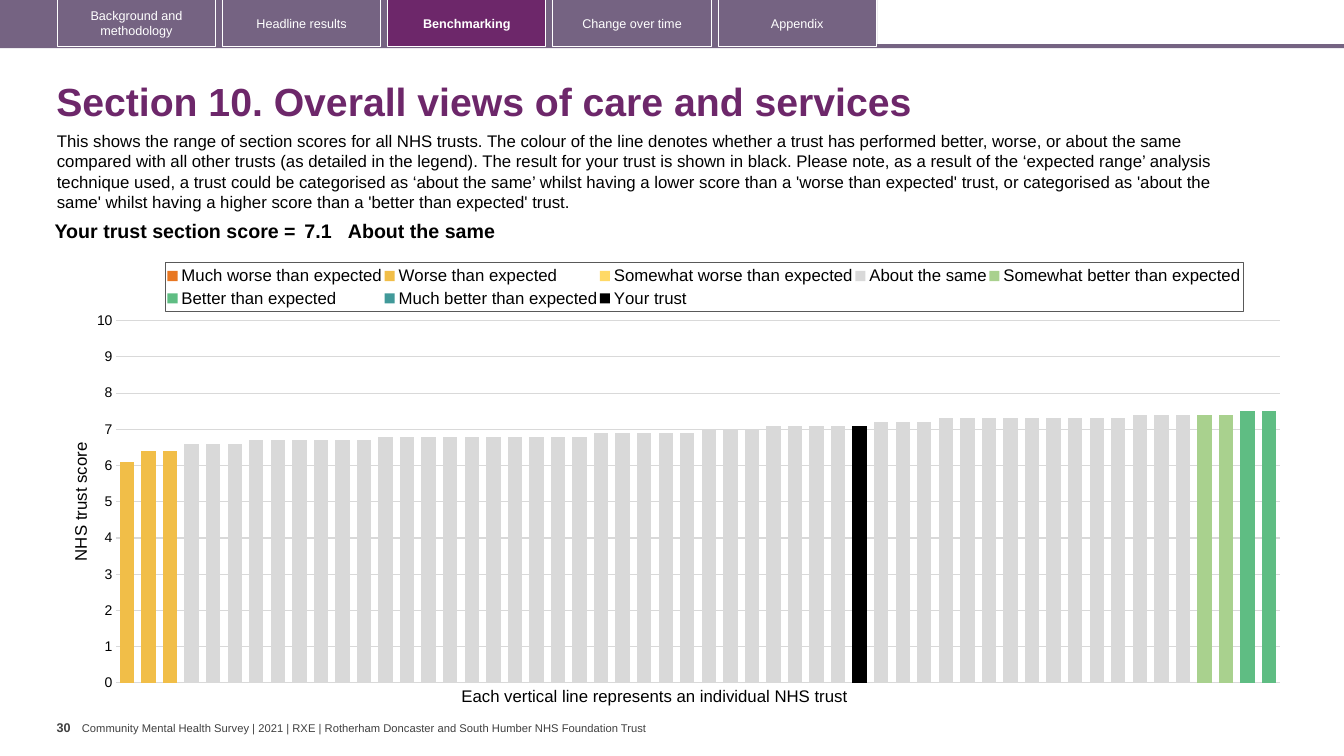
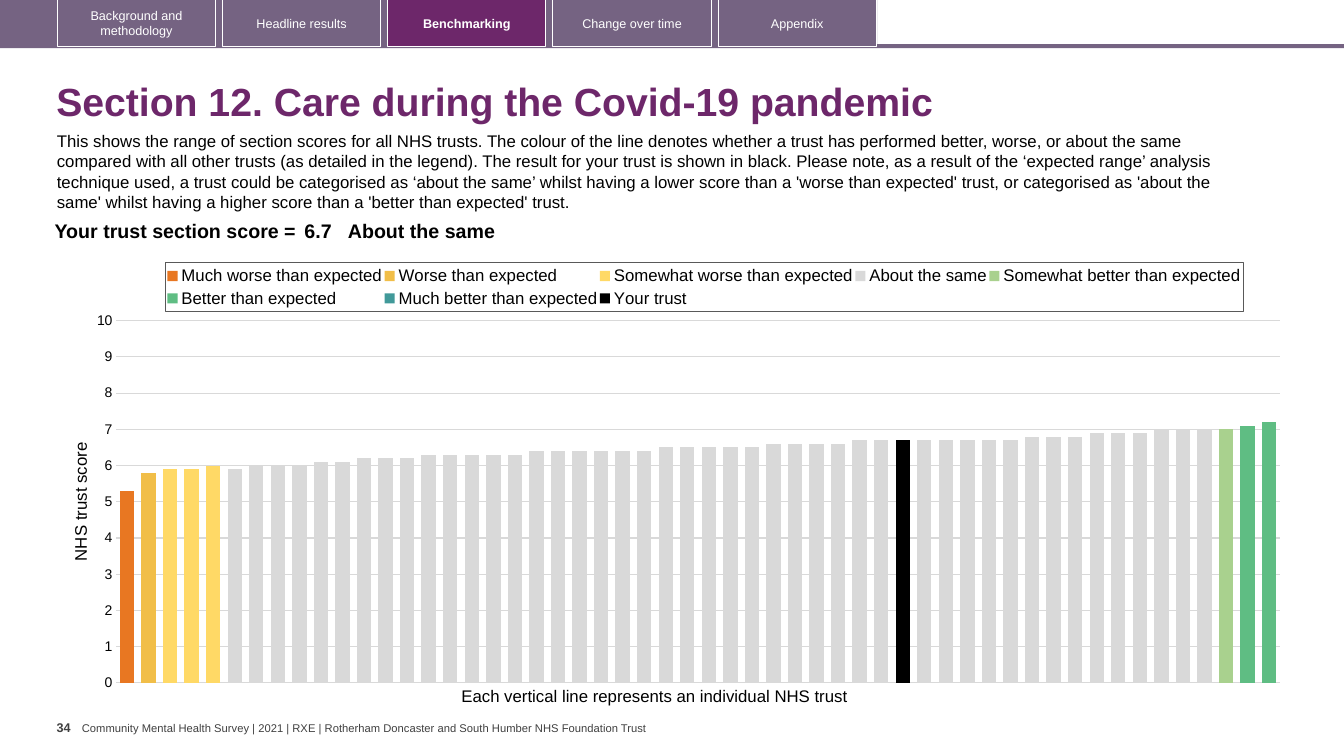
from copy import deepcopy

from lxml import etree
from pptx import Presentation
from pptx import util as u
from pptx.chart import data as chart_data
from pptx.dml import color
from pptx.enum import chart as chart_enum
from pptx.enum import shapes, text
from pptx.oxml import ns

PURPLE, MAUVE, WHITE, BLACK = "6D276A", "756382", "FFFFFF", "000000"
FOOTER_GREY, GRID_GREY, FRAME_GREY = "404040", "D9D9D9", "595959"
SLIDE_WIDTH, SLIDE_HEIGHT = 960, 540

TABS = ["Background and methodology", "Headline results", "Benchmarking",
        "Change over time", "Appendix"]
ACTIVE_TAB = "Benchmarking"
FOOTER = ("Community Mental Health Survey | 2021 | RXE | "
          "Rotherham Doncaster and South Humber NHS Foundation Trust")
INTRODUCTION = (
    "This shows the range of section scores for all NHS trusts. The colour of the line "
    "denotes whether a trust has performed better, worse, or about the same compared with "
    "all other trusts (as detailed in the legend). The result for your trust is shown in "
    "black. Please note, as a result of the ‘expected range’ analysis technique used, a "
    "trust could be categorised as ‘about the same’ whilst having a lower score than a "
    "'worse than expected' trust, or categorised as 'about the same' whilst having a higher "
    "score than a 'better than expected' trust.")
CAPTION = "Each vertical line represents an individual NHS trust"

BAND_COLOURS = {
    "Much worse than expected": "E87722",
    "Worse than expected": "F1BE48",
    "Somewhat worse than expected": "FFD966",
    "About the same": "D9D9D9",
    "Somewhat better than expected": "A9D18E",
    "Better than expected": "5FBD83",
    "Much better than expected": "419999",
}

# Each band lists (score, number of trusts), from the lowest score up.
SECTIONS = [
    {"page": "30", "title": "Section 10. Overall views of care and services",
     "score": 7.1, "position": 34, "verdict": "About the same",
     "bands": {
         "Worse than expected": [(6.1, 1), (6.4, 2)],
         "About the same": [(6.6, 3), (6.7, 6), (6.8, 10), (6.9, 5), (7, 3),
                            (7.1, 5), (7.2, 3), (7.3, 9), (7.4, 3)],
         "Somewhat better than expected": [(7.4, 2)],
         "Better than expected": [(7.5, 2)]}},
    {"page": "34", "title": "Section 12. Care during the Covid-19 pandemic",
     "score": 6.7, "position": 36, "verdict": "About the same",
     "bands": {
         "Much worse than expected": [(5.3, 1)],
         "Worse than expected": [(5.8, 1)],
         "Somewhat worse than expected": [(5.9, 2), (6, 1)],
         "About the same": [(5.9, 1), (6, 3), (6.1, 2), (6.2, 3), (6.3, 5), (6.4, 6),
                            (6.5, 5), (6.6, 4), (6.7, 8), (6.8, 3), (6.9, 3), (7, 3)],
         "Somewhat better than expected": [(7, 1)],
         "Better than expected": [(7.1, 1), (7.2, 1)]}},
]


def rgb(value):
    return color.RGBColor.from_string(value)


def points(box):
    return [u.Pt(length) for length in box]


def apply_format(target, **values):
    for name, value in values.items():
        setattr(target, name, value)


def format_font(font, size, colour=BLACK, bold=False, name="Arial"):
    apply_format(font, size=u.Pt(size), bold=bold, name=name)
    font.color.rgb = rgb(colour)


def write(frame, content, size, colour=BLACK, bold=False, align=text.PP_ALIGN.LEFT):
    frame.text = content
    paragraph = frame.paragraphs[0]
    paragraph.alignment = align
    format_font(paragraph.runs[0].font, size, colour, bold)
    return paragraph


def margins(left, top, right, bottom):
    return {"margin_left": u.Pt(left), "margin_top": u.Pt(top),
            "margin_right": u.Pt(right), "margin_bottom": u.Pt(bottom)}


def add_text(slide, box, content, size, colour=BLACK, bold=False, **frame_format):
    frame = slide.shapes.add_textbox(*points(box)).text_frame
    apply_format(frame, **{"word_wrap": True, **frame_format})
    write(frame, content, size, colour, bold)


def add_rectangle(slide, box, fill=None, line=None):
    shape = slide.shapes.add_shape(shapes.MSO_SHAPE.RECTANGLE, *points(box))
    shape.shadow.inherit = False
    if fill:
        shape.fill.solid()
        shape.fill.fore_color.rgb = rgb(fill)
    else:
        shape.fill.background()
    if line:
        shape.line.color.rgb = rgb(line)
        shape.line.width = u.Pt(0.75)
    else:
        shape.line.fill.background()
    return shape


def add_navigation(slide, box):
    left, top, width, height = box
    tab_left, tab_step, tab_width = 41, 118, 113
    add_rectangle(slide, (left, top + height - 2.5, width, 3), MAUVE)
    add_rectangle(slide, (left, top, 626.5, height), MAUVE)
    for index, label in enumerate(TABS):
        active = label == ACTIVE_TAB
        tab = add_rectangle(
            slide, (left + tab_left + index * tab_step, top - 0.5, tab_width, height),
            PURPLE if active else None, WHITE)
        apply_format(tab.text_frame, word_wrap=True,
                     vertical_anchor=text.MSO_ANCHOR.MIDDLE)
        write(tab.text_frame, label, 9, WHITE, active, text.PP_ALIGN.CENTER)


def add_footer(slide, box, page):
    left, top, width, height = box
    add_text(slide, (left, top, 18, height), page, 9, FOOTER_GREY, True,
             word_wrap=False, **margins(0, 3.6, 0, 3.6))
    add_text(slide, (left + 18, top + 4.5, width - 18, 9.5), FOOTER, 8, FOOTER_GREY,
             word_wrap=False, vertical_anchor=text.MSO_ANCHOR.MIDDLE,
             **margins(0, 0, 0, 0))


def format_title(slide, box, content):
    title = slide.shapes.title
    apply_format(title, **dict(zip(("left", "top", "width", "height"), points(box))))
    apply_format(title.text_frame, word_wrap=True, auto_size=text.MSO_AUTO_SIZE.NONE,
                 vertical_anchor=text.MSO_ANCHOR.MIDDLE)
    write(title.text_frame, content, 28, PURPLE, True).line_spacing = 0.9


def add_score_table(slide, box, score, verdict):
    left, top, width, height = box
    table = slide.shapes.add_table(1, 3, *points(box)).table
    apply_format(table, first_row=False, horz_banding=False)
    columns = [
        ("Your trust section score =", 189.5, 3, text.PP_ALIGN.RIGHT),
        (str(score), 34, 3, text.PP_ALIGN.LEFT),
        (verdict, width - 223.5, 0, text.PP_ALIGN.LEFT),
    ]
    for index, (content, column_width, side, align) in enumerate(columns):
        table.columns[index].width = u.Pt(column_width)
        cell = table.cell(0, index)
        cell.fill.background()
        apply_format(cell, **margins(side, 3, side, 3))
        write(cell.text_frame, content, 14, bold=True, align=align)


def band_values(bands):
    """Place the bands one after another along the shared categories."""
    total = sum(count for runs in bands.values() for _, count in runs)
    result, start = {}, 0
    for name in BAND_COLOURS:
        scores = [score for score, count in bands.get(name, []) for _ in range(count)]
        end = start + len(scores)
        result[name] = [None] * start + scores + [None] * (total - end)
        start = end
    return result, total


def add_element(parent, tag, **attributes):
    return etree.SubElement(parent, ns.qn(tag), attributes)


def set_layout(parent, index, fractions, inner=False):
    for old in parent.findall(ns.qn("c:layout")):
        parent.remove(old)
    layout = etree.Element(ns.qn("c:layout"))
    manual = add_element(layout, "c:manualLayout")
    if inner:
        add_element(manual, "c:layoutTarget", val="inner")
    for name in ("xMode", "yMode"):
        add_element(manual, "c:" + name, val="edge")
    for name, fraction in zip("xywh", fractions):
        add_element(manual, "c:" + name, val=str(fraction))
    parent.insert(index, layout)


def frame_legend(legend):
    properties = etree.Element(ns.qn("c:spPr"))
    line = add_element(properties, "a:ln", w=str(u.Pt(0.75)))
    add_element(add_element(line, "a:solidFill"), "a:srgbClr", val=FRAME_GREY)
    legend.find(ns.qn("c:overlay")).addnext(properties)


def move_last_series_to_second_axis(plot_area):
    bars = plot_area.find(ns.qn("c:barChart"))
    second_bars = deepcopy(bars)
    for series in second_bars.findall(ns.qn("c:ser"))[:-1]:
        second_bars.remove(series)
    bars.remove(bars.findall(ns.qn("c:ser"))[-1])
    category_axis = plot_area.find(ns.qn("c:catAx"))
    value_axis = plot_area.find(ns.qn("c:valAx"))
    second_category, second_value = deepcopy(category_axis), deepcopy(value_axis)
    for tag in ("c:majorGridlines", "c:title"):
        second_value.remove(second_value.find(ns.qn(tag)))
    for tag, value in {"c:axPos": "r", "c:tickLblPos": "none", "c:crosses": "max"}.items():
        second_value.find(ns.qn(tag)).set("val", value)
    for part in (second_bars, second_category, second_value):
        for tag in ("c:axId", "c:crossAx"):
            for reference in part.findall(ns.qn(tag)):
                reference.set("val", str(int(reference.get("val")) + 1))
    bars.addnext(second_bars)
    value_axis.addnext(second_value)
    second_value.addnext(second_category)


def add_score_chart(slide, box, section):
    values, total = band_values(section["bands"])
    values["Your trust"] = [section["score"] if index == section["position"] else None
                            for index in range(total)]
    data = chart_data.CategoryChartData()
    data.categories = [str(number) for number in range(1, total + 1)]
    for name, scores in values.items():
        data.add_series(name, scores)
    chart = slide.shapes.add_chart(chart_enum.XL_CHART_TYPE.COLUMN_CLUSTERED,
                                   *points(box), data).chart
    chart.has_title = False
    format_font(chart.font, 10, name="Calibri")

    plot = chart.plots[0]
    apply_format(plot, gap_width=50, overlap=100, vary_by_categories=False)
    for series, colour in zip(plot.series, [*BAND_COLOURS.values(), BLACK]):
        series.invert_if_negative = False
        series.format.fill.solid()
        series.format.fill.fore_color.rgb = rgb(colour)

    chart.category_axis.visible = False
    axis = chart.value_axis
    no_tick = chart_enum.XL_TICK_MARK.NONE
    apply_format(axis, minimum_scale=0, maximum_scale=10, major_unit=1,
                 major_tick_mark=no_tick, minor_tick_mark=no_tick,
                 tick_label_position=chart_enum.XL_TICK_LABEL_POSITION.NEXT_TO_AXIS,
                 has_major_gridlines=True)
    axis.format.line.fill.background()
    axis.major_gridlines.format.line.color.rgb = rgb(GRID_GREY)
    axis.major_gridlines.format.line.width = u.Pt(0.75)
    format_font(axis.tick_labels.font, 10)
    write(axis.axis_title.text_frame, "NHS trust score", 12, align=text.PP_ALIGN.CENTER)

    chart.has_legend = True
    apply_format(chart.legend, position=chart_enum.XL_LEGEND_POSITION.TOP,
                 include_in_layout=False)
    format_font(chart.legend.font, 12)
    plot_area = chart.element.find(".//" + ns.qn("c:plotArea"))
    legend = chart.element.find(".//" + ns.qn("c:legend"))
    set_layout(plot_area, 0, (0.04, 0.16, 0.95, 0.81), inner=True)
    set_layout(legend, 1, (0.08, 0.03, 0.88, 0.11))
    frame_legend(legend)
    move_last_series_to_second_axis(plot_area)


def add_section_slide(presentation, section):
    slide = presentation.slides.add_slide(presentation.slide_layouts[5])
    add_navigation(slide, (0, 0, SLIDE_WIDTH, 34))
    format_title(slide, (33, 48, 899, 52), section["title"])
    add_text(slide, (33.5, 90, 873.5, 65.5), INTRODUCTION, 12)
    add_score_table(slide, (25, 155, 842, 22), section["score"], section["verdict"])
    add_score_chart(slide, (48, 178, 875, 319.5), section)
    add_text(slide, (322.5, 486, 296, 22), CAPTION, 12, word_wrap=False)
    add_footer(slide, (40.5, 511, 427, 28.5), section["page"])


def main():
    presentation = Presentation()
    apply_format(presentation, slide_width=u.Pt(SLIDE_WIDTH),
                 slide_height=u.Pt(SLIDE_HEIGHT))
    for section in SECTIONS:
        add_section_slide(presentation, section)
    presentation.save("out.pptx")


if __name__ == "__main__":
    main()
